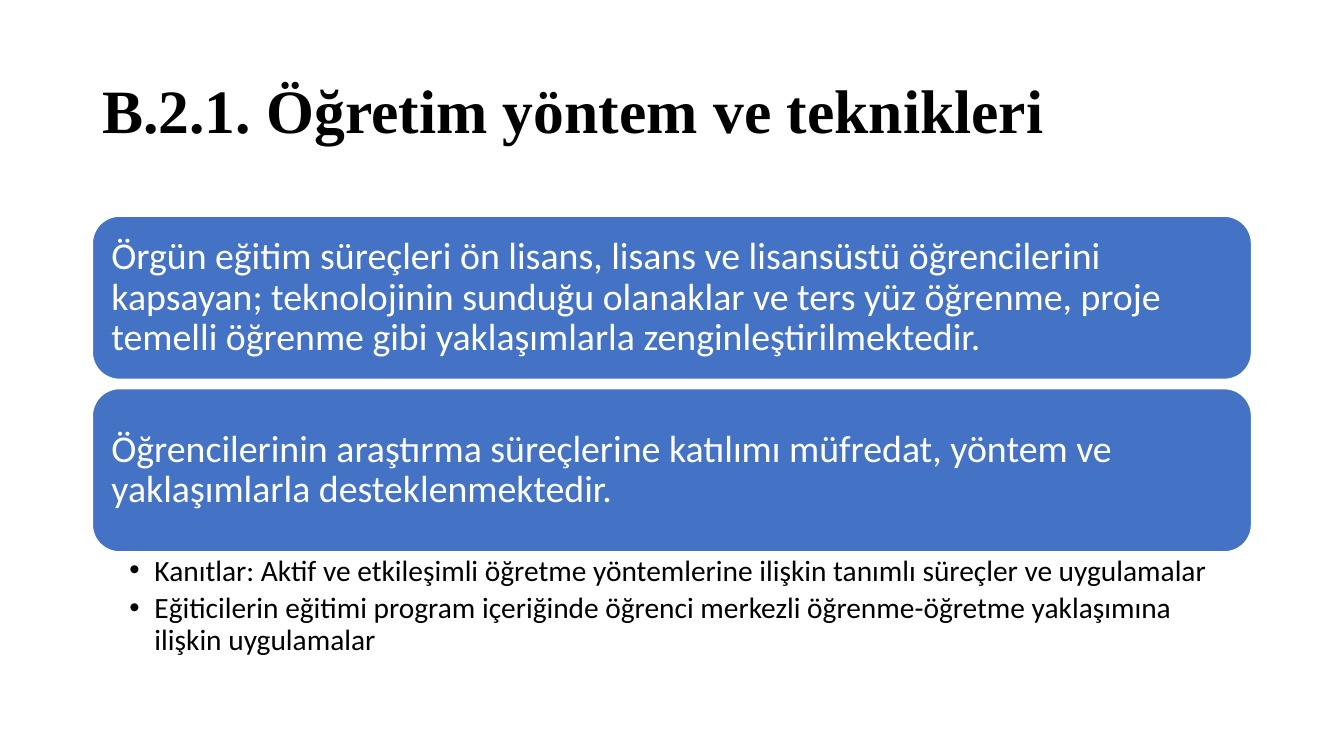
from lxml import etree
from pptx import Presentation, util as u
from pptx.dml.color import RGBColor
from pptx.enum import shapes, text
from pptx.oxml.ns import qn

COLORS = {"ink": "000000", "card": "4472C4", "paper": "FFFFFF"}
LEFT, WIDTH = 66, 828
CARD_TOP, CARD_HEIGHT, CARD_GAP = 154.4, 116.6, 6.6

HEADING = "B.2.1. Öğretim yöntem ve teknikleri"
STATEMENTS = [
    "Örgün eğitim süreçleri ön lisans, lisans ve lisansüstü öğrencilerini kapsayan; "
    "teknolojinin sunduğu olanaklar ve ters yüz öğrenme, proje temelli öğrenme gibi "
    "yaklaşımlarla zenginleştirilmektedir.",
    "Öğrencilerinin araştırma süreçlerine katılımı müfredat, yöntem ve "
    "yaklaşımlarla desteklenmektedir.",
]
EVIDENCE = [
    "Kanıtlar: Aktif ve etkileşimli öğretme yöntemlerine ilişkin tanımlı süreçler ve uygulamalar",
    "Eğiticilerin eğitimi program içeriğinde öğrenci merkezli öğrenme-öğretme "
    "yaklaşımına ilişkin uygulamalar",
]


class SlideBuilder:
    def __init__(self, slide):
        self.slide = slide
        self.styles = {
            "heading": {"name": "Times New Roman", "size": u.Pt(44), "bold": True},
            "statement": {"name": "Calibri", "size": u.Pt(27)},
            "evidence": {"name": "Calibri", "size": u.Pt(21)},
        }

    def color(self, name):
        return RGBColor.from_string(COLORS[name])

    def fill_text(self, frame, lines, style, ink, margins, anchor):
        sides = ("margin_left", "margin_top", "margin_right", "margin_bottom")
        layout = dict(zip(sides, map(u.Pt, margins)))
        layout.update(word_wrap=True, vertical_anchor=anchor)
        for key, value in layout.items():
            setattr(frame, key, value)
        for index, line in enumerate(lines):
            paragraph = frame.add_paragraph() if index else frame.paragraphs[0]
            paragraph.alignment = text.PP_ALIGN.LEFT
            paragraph.line_spacing = 0.9
            run = paragraph.add_run()
            run.text = line
            for key, value in self.styles[style].items():
                setattr(run.font, key, value)
            run.font.color.rgb = self.color(ink)

    def heading(self, line, top, height):
        box = self.slide.shapes.add_textbox(*map(u.Pt, (LEFT, top, WIDTH, height)))
        self.fill_text(box.text_frame, [line], "heading", "ink",
                       (7.2, 3.6, 7.2, 3.6), text.MSO_ANCHOR.MIDDLE)

    def card(self, line, top):
        card = self.slide.shapes.add_shape(
            shapes.MSO_SHAPE.ROUNDED_RECTANGLE,
            *map(u.Pt, (LEFT, top, WIDTH, CARD_HEIGHT)))
        card.shadow.inherit = False
        card.fill.solid()
        card.fill.fore_color.rgb = self.color("card")
        card.line.color.rgb = self.color("paper")
        card.line.width = u.Pt(1)
        self.fill_text(card.text_frame, [line], "statement", "paper",
                       (8, 8, 8, 8), text.MSO_ANCHOR.MIDDLE)

    def bullets(self, lines, top, height):
        box = self.slide.shapes.add_textbox(*map(u.Pt, (LEFT, top, WIDTH, height)))
        self.fill_text(box.text_frame, lines, "evidence", "ink",
                       (26.4, 2.7, 15, 2.7), text.MSO_ANCHOR.TOP)
        for paragraph in box.text_frame.paragraphs:
            paragraph.space_after = u.Pt(4)
            properties = paragraph._p.get_or_add_pPr()
            properties.set("marL", str(u.Pt(18)))
            properties.set("indent", str(u.Pt(-18)))
            etree.SubElement(properties, qn("a:buFont"), typeface="Arial")
            etree.SubElement(properties, qn("a:buChar"), char="•")


def main():
    deck = Presentation()
    deck.slide_width, deck.slide_height = u.Pt(960), u.Pt(540)
    builder = SlideBuilder(deck.slides.add_slide(deck.slide_layouts[6]))
    builder.heading(HEADING, 28.8, 104.4)
    for index, statement in enumerate(STATEMENTS):
        builder.card(statement, CARD_TOP + index * (CARD_HEIGHT + CARD_GAP))
    builder.bullets(EVIDENCE, 394.3, 81.4)
    deck.save("out.pptx")


if __name__ == "__main__":
    main()
